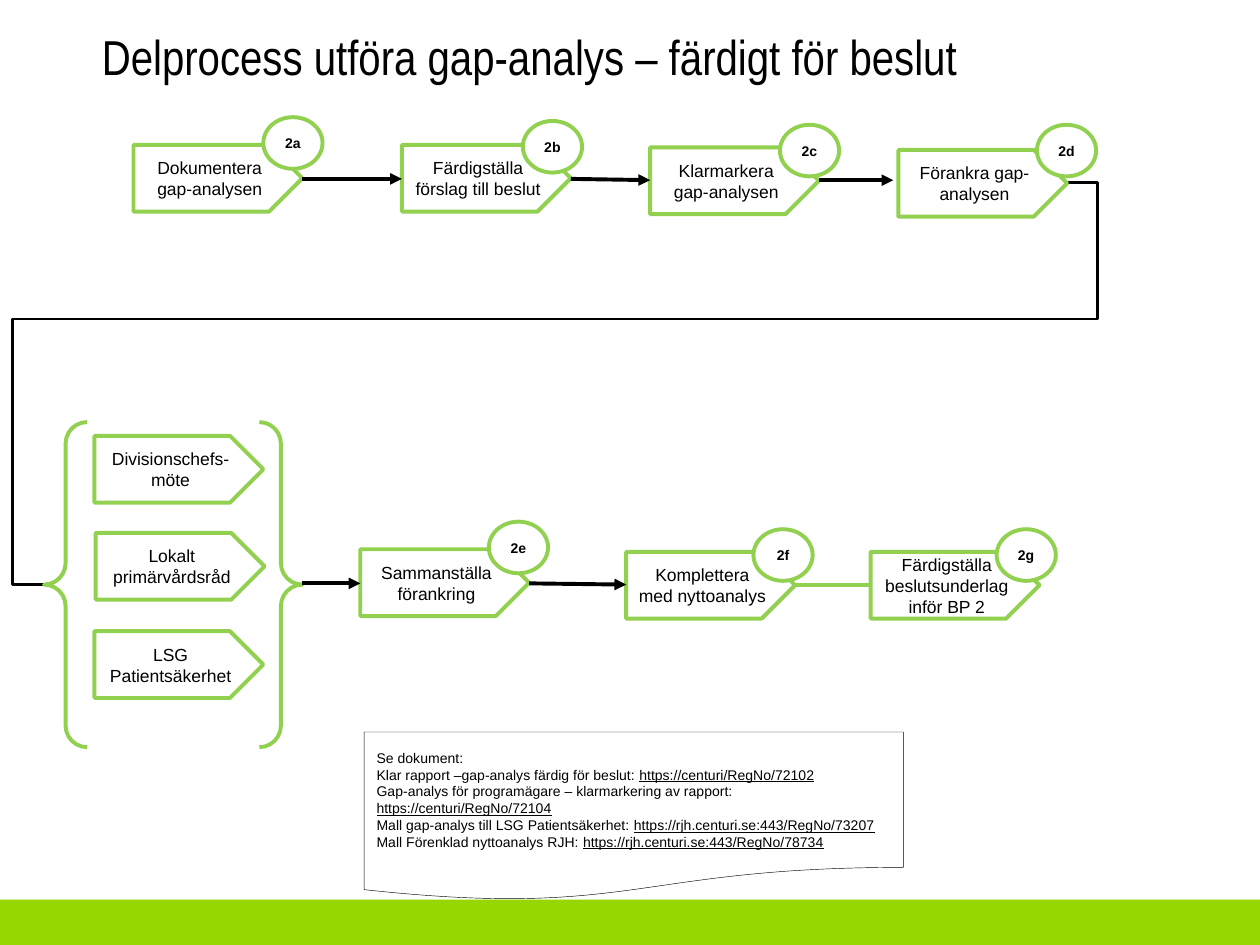
from lxml import etree
from pptx import Presentation
from pptx import util as u
from pptx.dml.color import RGBColor
from pptx.enum import shapes as s, text as t
from pptx.oxml.ns import qn

GREEN, BLACK, WHITE, FOOTER = "92D050", "000000", "FFFFFF", "97D700"
STEP_SIZE = (1.34, 0.53)
BADGE_SIZE = (0.47, 0.41)

STEPS = [
    (1.06, 1.15, "Dokumentera gap-analysen"),
    (3.19, 1.15, "Färdigställa förslag till beslut"),
    (5.16, 1.17, "Klarmarkera gap-analysen"),
    (7.13, 1.19, "Förankra gap-analysen"),
    (0.75, 3.46, "Divisionschefs-möte"),
    (0.76, 4.23, "Lokalt primärvårdsråd"),
    (0.75, 5.01, "LSG Patientsäkerhet"),
    (2.86, 4.36, "Sammanställa förankring"),
    (4.97, 4.38, "Komplettera med nyttoanalys"),
    (6.91, 4.38, "Färdigställa beslutsunderlag inför BP 2"),
]
BADGES = [
    (2.09, 0.93, "2a"), (4.15, 0.96, "2b"), (6.19, 0.99, "2c"), (8.23, 0.99, "2d"),
    (3.88, 4.14, "2e"), (5.98, 4.2, "2f"), (7.91, 4.2, "2g"),
]
ARROWS = [
    (2.4, 1.42, 3.19, 1.42), (4.53, 1.42, 5.16, 1.43), (6.5, 1.43, 7.09, 1.43),
    (2.4, 4.63, 2.86, 4.63), (4.2, 4.63, 4.97, 4.64),
]
REFERENCES = [
    ("Se dokument:", ""),
    ("Klar rapport –gap-analys färdig för beslut: ", "https://centuri/RegNo/72102"),
    ("Gap-analys för programägare – klarmarkering av rapport: ", "https://centuri/RegNo/72104"),
    ("Mall gap-analys till LSG Patientsäkerhet: ", "https://rjh.centuri.se:443/RegNo/73207"),
    ("Mall Förenklad nyttoanalys RJH: ", "https://rjh.centuri.se:443/RegNo/78734"),
]


def paint(color_format, color):
    color_format.rgb = RGBColor.from_string(color)


def add_run(paragraph, words, size, font="Arial", bold=False, underline=False):
    run = paragraph.add_run()
    run.text = words
    run.font.size = u.Pt(size)
    run.font.name = font
    run.font.bold = bold
    run.font.underline = underline
    paint(run.font.color, BLACK)


def add_outline(slide, preset, box, fill=None, line=GREEN, width=2.25):
    outline = slide.shapes.add_shape(preset, *map(u.Inches, box))
    outline.shadow.inherit = False
    if fill:
        outline.fill.solid()
        paint(outline.fill.fore_color, fill)
    else:
        outline.fill.background()
    if line:
        paint(outline.line.color, line)
        outline.line.width = u.Pt(width)
    else:
        outline.line.fill.background()
    return outline


def add_label(outline, words, size, bold=False):
    frame = outline.text_frame
    frame.word_wrap = True
    frame.vertical_anchor = t.MSO_ANCHOR.MIDDLE
    frame.paragraphs[0].alignment = t.PP_ALIGN.CENTER
    add_run(frame.paragraphs[0], words, size, bold=bold)


def add_step(slide, left, top, words):
    step = add_outline(slide, s.MSO_SHAPE.PENTAGON, (left, top, *STEP_SIZE))
    add_label(step, words, 10)


def add_badge(slide, left, top, code):
    badge = add_outline(slide, s.MSO_SHAPE.OVAL, (left, top, *BADGE_SIZE), fill=WHITE)
    badge.text_frame.margin_left = badge.text_frame.margin_right = 0
    add_label(badge, code, 8, bold=True)


def add_flow(slide, ends, color=BLACK, width=2.25, arrow=True, kind=s.MSO_CONNECTOR.STRAIGHT):
    flow = slide.shapes.add_connector(kind, *map(u.Inches, ends))
    paint(flow.line.color, color)
    flow.line.width = u.Pt(width)
    properties = flow._element.spPr
    etree.SubElement(properties, qn("a:effectLst"))
    if arrow:
        etree.SubElement(properties.find(qn("a:ln")), qn("a:tailEnd"), type="triangle")
    return flow


def add_row_return(slide):
    row_return = add_flow(slide, (8.46, 1.45, 0.35, 4.64), width=1.5, arrow=False,
                          kind=s.MSO_CONNECTOR.ELBOW)
    geometry = row_return._element.spPr.find(qn("a:prstGeom"))
    geometry.set("prst", "bentConnector5")
    guides = geometry.find(qn("a:avLst"))
    if guides is None:
        guides = etree.SubElement(geometry, qn("a:avLst"))
    for number, value in enumerate((-3100, 33900, 103100), 1):
        etree.SubElement(guides, qn("a:gd"), name=f"adj{number}", fmla=f"val {value}")


def add_title(slide, words):
    frame = slide.shapes.add_textbox(*map(u.Inches, (0.71, 0.21, 8.58, 0.71))).text_frame
    frame.word_wrap = True
    frame.paragraphs[0].line_spacing = 0.9
    add_run(frame.paragraphs[0], words, 28, font="Arial Narrow")


def add_references(slide):
    document = add_outline(slide, s.MSO_SHAPE.FLOWCHART_DOCUMENT, (2.89, 5.81, 4.28, 1.34),
                           line=BLACK, width=0.25)
    frame = document.text_frame
    frame.word_wrap = True
    frame.vertical_anchor = t.MSO_ANCHOR.MIDDLE
    for number, (description, address) in enumerate(REFERENCES):
        paragraph = frame.add_paragraph() if number else frame.paragraphs[0]
        paragraph.alignment = t.PP_ALIGN.LEFT
        add_run(paragraph, description, 8)
        if address:
            add_run(paragraph, address, 8, underline=True)


def main():
    deck = Presentation()
    deck.slide_width, deck.slide_height = u.Inches(10), u.Inches(7.5)
    slide = deck.slides.add_slide(deck.slide_layouts[6])

    add_outline(slide, s.MSO_SHAPE.RECTANGLE, (0, 7.14, 10, 0.36), fill=FOOTER, line=None)
    add_title(slide, "Delprocess utföra gap-analys – färdigt för beslut")
    add_row_return(slide)
    add_references(slide)
    for step in STEPS:
        add_step(slide, *step)
    add_outline(slide, s.MSO_SHAPE.DOUBLE_BRACE, (0.35, 3.35, 2.05, 2.58))
    for ends in ARROWS:
        add_flow(slide, ends)
    add_flow(slide, (6.31, 4.64, 6.91, 4.64), color=GREEN, arrow=False)
    for badge in BADGES:
        add_badge(slide, *badge)

    deck.save("out.pptx")


if __name__ == "__main__":
    main()
